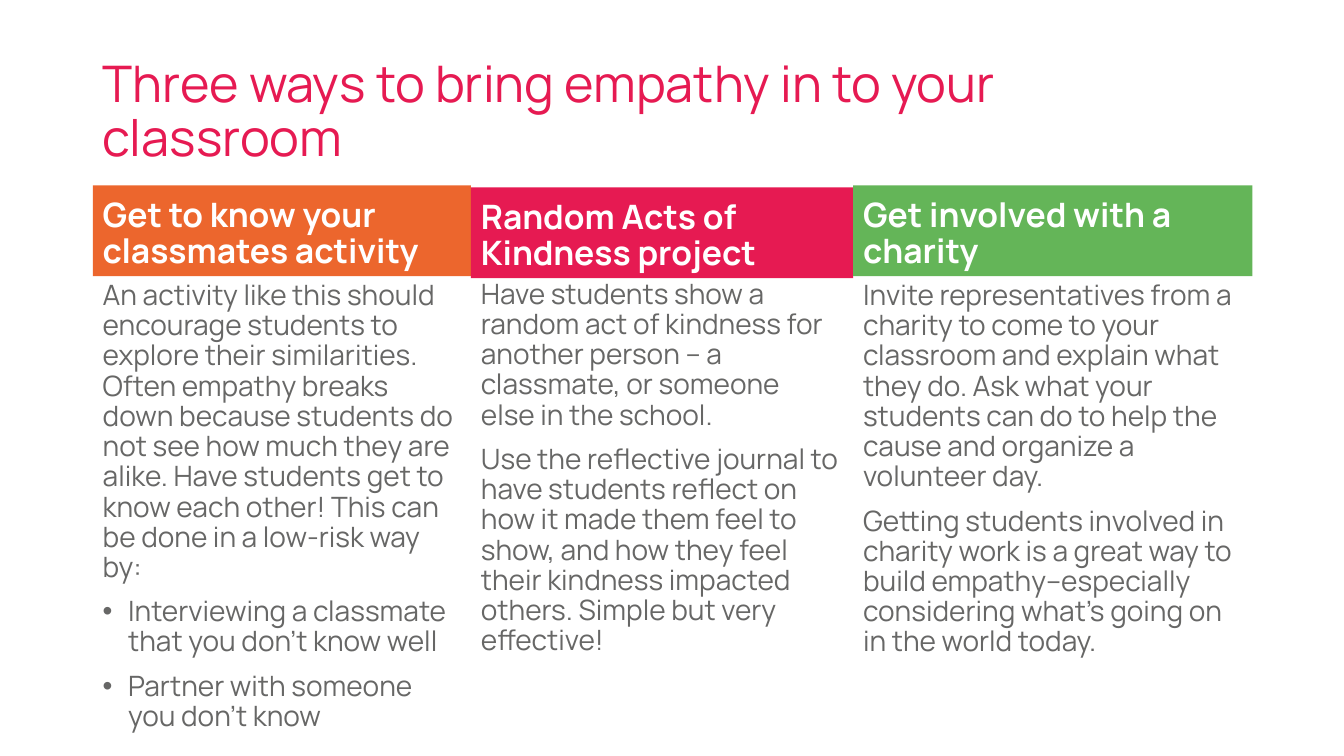
from lxml import etree
from pptx import Presentation
from pptx import util as u
from pptx.dml.color import RGBColor
from pptx.enum import shapes, text
from pptx.oxml import ns

TITLE = "Three ways to bring empathy in to your classroom"
COLUMNS = [
    {
        "heading": "Get to know your classmates activity",
        "color": "orange",
        "width": 9.53,
        "body_width": 9.53,
        "heading_top": 4.67,
        "body_top": 6.96,
        "paragraphs": [
            "An activity like this should encourage students to explore their similarities. "
            "Often empathy breaks down because students do not see how much they are alike. "
            "Have students get to know each other! This can be done in a low-risk way by:",
        ],
        "bullets": [
            "Interviewing a classmate that you don’t know well",
            "Partner with someone you don’t know",
        ],
    },
    {
        "heading": "Random Acts of Kindness project",
        "color": "red",
        "width": 9.63,
        "body_width": 9.53,
        "heading_top": 4.72,
        "body_top": 6.93,
        "paragraphs": [
            "Have students show a random act of kindness for another person – a classmate, "
            "or someone else in the school.",
            "Use the reflective journal to have students reflect on how it made them feel to show, "
            "and how they feel their kindness impacted others. Simple but very effective!",
        ],
        "bullets": [],
    },
    {
        "heading": "Get involved with a charity",
        "color": "green",
        "width": 10.06,
        "body_width": 10.06,
        "heading_top": 4.67,
        "body_top": 6.96,
        "paragraphs": [
            "Invite representatives from a charity to come to your classroom and explain what they do. "
            "Ask what your students can do to help the cause and organize a volunteer day.",
            "Getting students involved in charity work is a great way to build empathy–especially "
            "considering what’s going on in the world today.",
        ],
        "bullets": [],
    },
]
THEME = {
    "font": "Manrope",
    "colors": {
        "orange": "EC662D", "red": "E61A52", "green": "64B558",
        "gray": "676766", "white": "FFFFFF",
    },
    "styles": {
        "title": {"size": 36, "color": "red", "bold": False, "anchor": text.MSO_ANCHOR.MIDDLE},
        "heading": {"size": 24, "color": "white", "bold": True, "anchor": text.MSO_ANCHOR.BOTTOM},
        "body": {"size": 20, "color": "gray", "bold": False, "anchor": text.MSO_ANCHOR.TOP},
    },
}
LEFT = 2.34
HEADING_HEIGHT = 2.29
BODY_HEIGHT = 10.24
BULLET_INDENT = 0.64


def theme_color(name):
    return RGBColor.from_string(THEME["colors"][name])


def set_all(target, values):
    for name, value in values.items():
        setattr(target, name, value)


def add_bullet(paragraph):
    properties = paragraph._p.get_or_add_pPr()
    indent = u.Cm(BULLET_INDENT)
    properties.set("marL", str(indent))
    properties.set("indent", str(-indent))
    etree.SubElement(properties, ns.qn("a:buFont")).set("typeface", "Arial")
    etree.SubElement(properties, ns.qn("a:buChar")).set("char", "•")


def write(shape, style_name, paragraphs, bullets=()):
    style = THEME["styles"][style_name]
    frame = shape.text_frame
    set_all(frame, {
        "word_wrap": True,
        "auto_size": text.MSO_AUTO_SIZE.NONE,
        "vertical_anchor": style["anchor"],
    })
    for index, content in enumerate([*paragraphs, *bullets]):
        paragraph = frame.add_paragraph() if index else frame.paragraphs[0]
        paragraph.text = content
        if index >= len(paragraphs):
            add_bullet(paragraph)
        set_all(paragraph, {
            "alignment": text.PP_ALIGN.LEFT,
            "line_spacing": 0.9,
            "space_before": u.Pt(10 if index else 0),
        })
        set_all(paragraph.font, {
            "name": THEME["font"], "size": u.Pt(style["size"]), "bold": style["bold"],
        })
        paragraph.font.color.rgb = theme_color(style["color"])


def add_column(slide, column, left):
    heading_box = map(u.Cm, (left, column["heading_top"], column["width"], HEADING_HEIGHT))
    heading = slide.shapes.add_shape(shapes.MSO_SHAPE.RECTANGLE, *heading_box)
    heading.shadow.inherit = False
    heading.fill.solid()
    heading.fill.fore_color.rgb = theme_color(column["color"])
    heading.line.fill.background()
    write(heading, "heading", [column["heading"]])

    body_box = map(u.Cm, (left, column["body_top"], column["body_width"], BODY_HEIGHT))
    body = slide.shapes.add_textbox(*body_box)
    write(body, "body", column["paragraphs"], column["bullets"])


def main():
    presentation = Presentation()
    set_all(presentation, {"slide_width": u.Cm(33.87), "slide_height": u.Cm(19.05)})
    slide = presentation.slides.add_slide(presentation.slide_layouts[6])

    title = slide.shapes.add_textbox(*map(u.Cm, (LEFT, 1.02, 23.75, 3.68)))
    write(title, "title", [TITLE])

    left = LEFT
    for column in COLUMNS:
        add_column(slide, column, left)
        left += column["width"]

    presentation.save("out.pptx")


if __name__ == "__main__":
    main()
